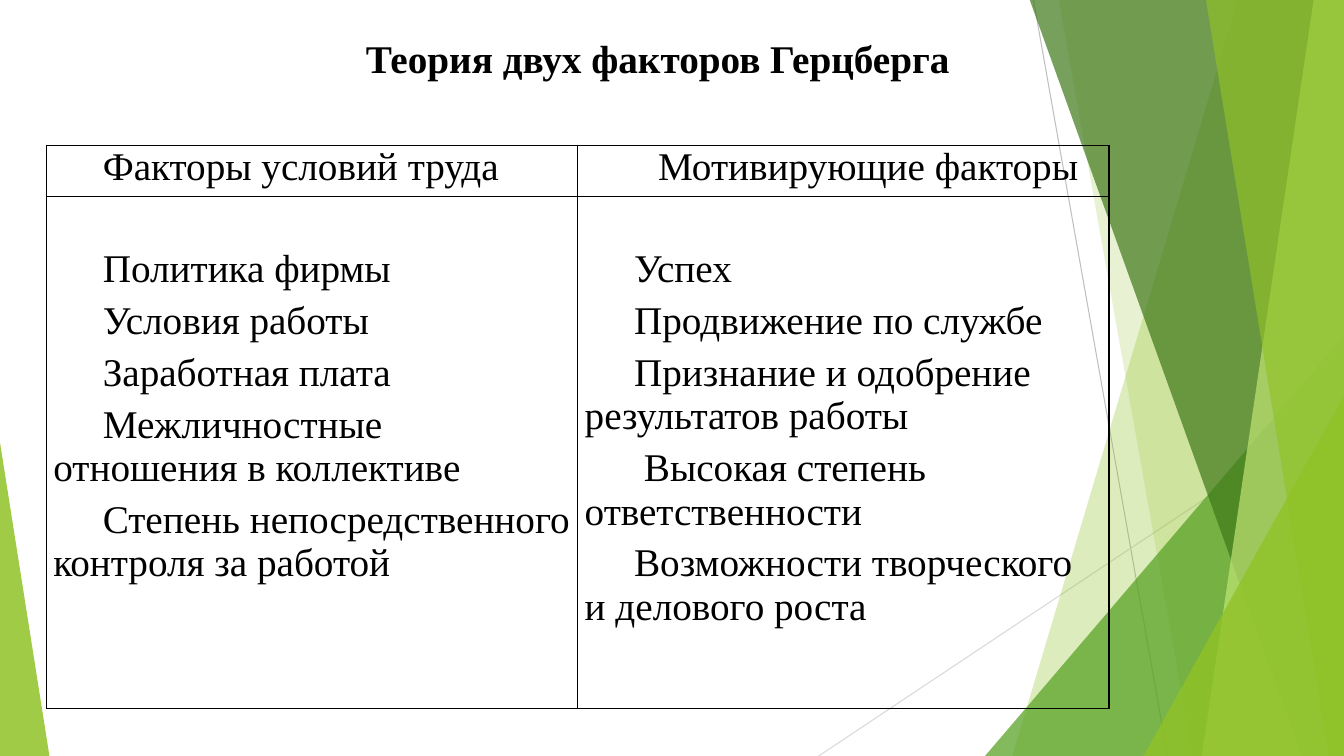
from lxml.etree import SubElement
from pptx import Presentation
from pptx.dml.color import RGBColor
from pptx.enum.shapes import MSO_CONNECTOR, MSO_SHAPE
from pptx.enum.text import PP_ALIGN
from pptx.oxml import parse_xml
from pptx.oxml.ns import nsdecls, qn
from pptx.util import Inches, Pt

COLORS = {
    "text": "000000",
    "border": "000000",
    "gray": "BFBFBF",
    "pale_gray": "D9D9D9",
    "lime": "90C226",
    "green": "54A021",
    "dark_green": "3F7819",
    "light_lime": "C0E474",
}
WIDTH, HEIGHT = 13.33, 7.5
FIRST_LINE_INDENT = 0.49

THIN_LINES = [
    ((10.25, 0), (11.58, HEIGHT), "gray"),
    ((WIDTH, 4.03), (8.12, HEIGHT), "pale_gray"),
]
BACK_FACETS = [(12.28, 10.04, "lime", 30), (10.5, 11.83, "lime", 20)]
FRONT_FACETS = [
    (10.21, 12.91, "dark_green", 70),
    (13.03, 11.92, "light_lime", 70),
    (11.96, 13.18, "lime", 65),
]
FACTORS = {
    "Факторы условий труда": [
        "Политика фирмы",
        "Условия работы",
        "Заработная плата",
        "Межличностные отношения в коллективе",
        "Степень непосредственного контроля за работой",
    ],
    "Мотивирующие факторы": [
        "Успех",
        "Продвижение по службе",
        "Признание и одобрение результатов работы",
        " Высокая степень ответственности",
        "Возможности творческого и делового роста",
    ],
}


def rgb(name):
    return RGBColor.from_string(COLORS[name])


def write(paragraph, text, bold=False, align=PP_ALIGN.LEFT, before=0, spacing=None):
    paragraph.alignment = align
    paragraph.space_before = Pt(before)
    if spacing:
        paragraph.line_spacing = Pt(spacing)
    properties = paragraph._p.get_or_add_pPr()
    properties.set("marL", "0")
    properties.set("indent", str(Inches(FIRST_LINE_INDENT)))
    run = paragraph.add_run()
    run.text = text
    run.font.name = "Times New Roman"
    run.font.size = Pt(28)
    run.font.bold = bold
    run.font.color.rgb = rgb("text")


def paint(shape, color, opacity):
    shape.shadow.inherit = False
    shape.line.fill.background()
    shape.fill.solid()
    shape.fill.fore_color.rgb = rgb(color)
    color_node = shape._element.spPr.find(qn("a:solidFill"))[0]
    SubElement(color_node, qn("a:alpha"), val=str(opacity * 1000))


def add_thin_line(slide, start, end, color):
    points = [Inches(value) for value in (*start, *end)]
    thin_line = slide.shapes.add_connector(MSO_CONNECTOR.STRAIGHT, *points)
    thin_line.line.color.rgb = rgb(color)
    thin_line.line.width = Pt(0.75)
    SubElement(thin_line._element.spPr, qn("a:effectLst"))


def add_facet(slide, top_x, bottom_x, color, opacity):
    top = Inches(-0.01)
    right, bottom = Inches(WIDTH), Inches(HEIGHT)
    outline = slide.shapes.build_freeform(Inches(top_x), top)
    outline.add_line_segments(
        [(right, top), (right, bottom), (Inches(bottom_x), bottom)], close=True
    )
    paint(outline.convert_to_shape(), color, opacity)


def add_corner(slide, left, width, height, apex, color, opacity):
    corner = slide.shapes.add_shape(
        MSO_SHAPE.ISOSCELES_TRIANGLE,
        Inches(left), Inches(HEIGHT - height), Inches(width), Inches(height),
    )
    corner.adjustments[0] = apex
    paint(corner, color, opacity)


def add_title(slide, text):
    title = slide.shapes.add_textbox(
        Inches(3.04), Inches(0.58), Inches(6.55), Inches(0.33)
    )
    title.text_frame.word_wrap = False
    write(title.text_frame.paragraphs[0], text, bold=True, spacing=12.7)


def format_cell(cell, top_margin=0):
    cell.margin_left = cell.margin_right = Inches(0.07)
    cell.margin_top, cell.margin_bottom = Inches(top_margin), 0
    cell.fill.background()
    properties = cell._tc.get_or_add_tcPr()
    for position, side in enumerate(("lnL", "lnR", "lnT", "lnB")):
        properties.insert(position, parse_xml(
            f'<a:{side} {nsdecls("a")} w="{Pt(1)}"><a:solidFill>'
            f'<a:srgbClr val="{COLORS["border"]}"/></a:solidFill></a:{side}>'
        ))


def add_factor_table(slide, factors):
    table = slide.shapes.add_table(
        2, len(factors), Inches(0.46), Inches(1.44), Inches(10.54), Inches(5.59)
    ).table
    table.first_row = table.horz_banding = False
    table.rows[0].height, table.rows[1].height = Inches(0.51), Inches(5.08)
    alignments = (PP_ALIGN.LEFT, PP_ALIGN.CENTER)
    for column, (heading, items) in enumerate(factors.items()):
        heading_cell, items_cell = table.cell(0, column), table.cell(1, column)
        format_cell(heading_cell)
        write(heading_cell.text_frame.paragraphs[0], heading, align=alignments[column])
        format_cell(items_cell, top_margin=0.51)
        frame = items_cell.text_frame
        for index, item in enumerate(items):
            paragraph = frame.add_paragraph() if index else frame.paragraphs[0]
            write(paragraph, item, before=6 if index else 0)


def main():
    presentation = Presentation()
    presentation.slide_width = Inches(WIDTH)
    presentation.slide_height = Inches(HEIGHT)
    slide = presentation.slides.add_slide(presentation.slide_layouts[6])
    for thin_line in THIN_LINES:
        add_thin_line(slide, *thin_line)
    for facet in BACK_FACETS:
        add_facet(slide, *facet)
    add_corner(slide, 9.77, 3.56, 4.17, 1, "green", 72)
    for facet in FRONT_FACETS:
        add_facet(slide, *facet)
    add_corner(slide, 11.34, 1.99, 3.57, 1, "lime", 80)
    add_corner(slide, 0, 0.49, 3.11, 0, "lime", 85)
    add_title(slide, "Теория двух факторов Герцберга")
    add_factor_table(slide, FACTORS)
    presentation.save("out.pptx")


if __name__ == "__main__":
    main()
